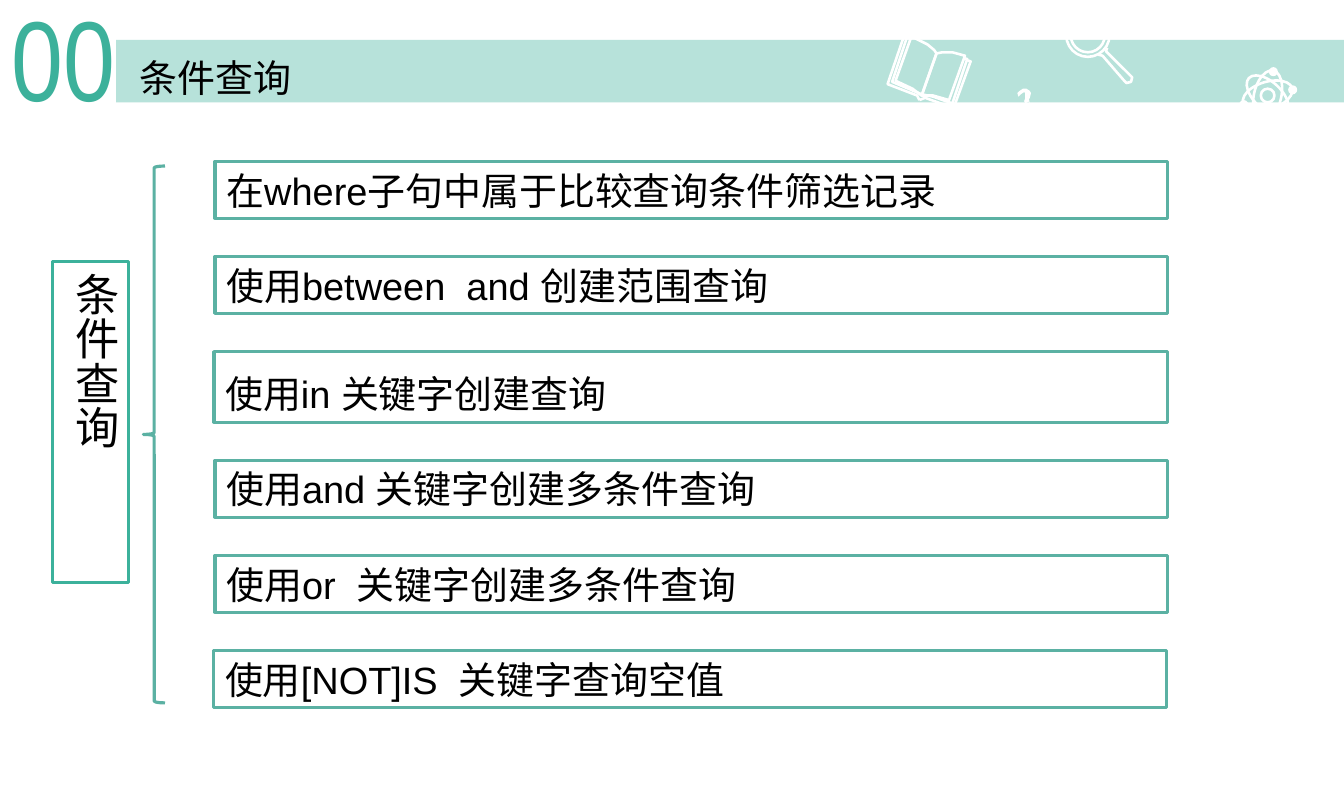
from lxml import etree
from pptx import Presentation
from pptx.dml import color
from pptx.enum import shapes, text
from pptx.oxml import ns
from pptx.util import Inches, Pt

TEAL, SOFT_TEAL, WHITE, BLACK = "3CB19B", "5BB1A3", "FFFFFF", "000000"
ICON_LINE = 1.63
CM_PER_INCH = 2.54


def paint(shape, fill=None, line=None, width=2):
    """Set fill and outline from hex colours; None means no paint."""
    shape.shadow.inherit = False
    if fill:
        shape.fill.solid()
        shape.fill.fore_color.rgb = color.RGBColor.from_string(fill)
    else:
        shape.fill.background()
    if line:
        shape.line.color.rgb = color.RGBColor.from_string(line)
        shape.line.width = Pt(width)
    else:
        shape.line.fill.background()


def write(shape, words, size, font, hex_color, wrap=True):
    frame = shape.text_frame
    frame.word_wrap = wrap
    paragraph = frame.paragraphs[0]
    paragraph.text = words
    paragraph.alignment = text.PP_ALIGN.LEFT
    paragraph.font.size = Pt(size)
    paragraph.font.name = font
    paragraph.font.color.rgb = color.RGBColor.from_string(hex_color)
    return paragraph


presentation = Presentation()
presentation.slide_width = Inches(30 / CM_PER_INCH)
presentation.slide_height = Inches(18 / CM_PER_INCH)
slide = presentation.slides.add_slide(presentation.slide_layouts[6])
canvas = slide.shapes

# Header: number, translucent band, title
number = canvas.add_textbox(Inches(0), Inches(-0.16), Inches(1.29), Inches(1.31))
write(number, "00", 72, "Arial Narrow", TEAL, wrap=False)

band = canvas.add_shape(shapes.MSO_SHAPE.RECTANGLE, Inches(1.02), Inches(0.35),
                        Inches(10.79), Inches(0.55))
paint(band, TEAL)
band_color = band.fill._xPr.find(".//" + ns.qn("a:srgbClr"))
etree.SubElement(band_color, ns.qn("a:alpha")).set("val", "37000")

title = canvas.add_textbox(Inches(1.13), Inches(0.43), Inches(1.53), Inches(0.5))
write(title, "条件查询", 24, "Noto Sans CJK SC", BLACK, wrap=False)

# Header icons, outlines: points, closed, fill, line
book_cover_left = [(7.97, 0.34), (7.94, 0.33), (7.8, 0.74), (8.06, 0.84), (8.08, 0.88)]
book_cover_right = [(8.08, 0.88), (8.13, 0.86), (8.38, 0.95), (8.53, 0.54), (8.5, 0.53)]
book_edge_left = [(8.1, 0.83), (7.84, 0.72), (7.97, 0.33), (8, 0.34)]
book_edge_right = [(8.1, 0.83), (8.2, 0.85), (8.37, 0.91), (8.5, 0.52), (8.47, 0.51)]
book_page_left = [(8.1, 0.84), (8.02, 0.78), (7.87, 0.71), (8.01, 0.32), (8.15, 0.39),
                  (8.21, 0.44), (8.23, 0.47)]
book_page_right = [(8.1, 0.84), (8.2, 0.84), (8.34, 0.88), (8.48, 0.49), (8.37, 0.46),
                   (8.28, 0.46), (8.23, 0.47)]
magnifier_handle = [(9.65, 0.48), (9.69, 0.49), (9.88, 0.71), (9.9, 0.73), (9.94, 0.72),
                    (9.95, 0.68), (9.72, 0.45), (9.73, 0.42)]
question_hook = [(9.05, 0.89), (9.01, 0.91), (9, 0.89), (9.01, 0.86), (9.01, 0.82),
                 (9, 0.81), (8.97, 0.83), (8.95, 0.85), (8.94, 0.82), (8.96, 0.8),
                 (8.99, 0.78), (9.02, 0.78), (9.05, 0.8), (9.06, 0.82), (9.05, 0.86),
                 (9.04, 0.88)]
question_dot = [(9.01, 0.92), (9.05, 0.9), (9.07, 0.94), (9.03, 0.96)]
outlines = [
    (book_cover_left, False, None, WHITE),
    (book_cover_right, False, None, WHITE),
    (book_edge_left, False, None, WHITE),
    (book_edge_right, False, None, WHITE),
    (book_page_left, True, None, WHITE),
    (book_page_right, True, None, WHITE),
    (magnifier_handle, False, None, WHITE),
    (question_hook, True, WHITE, None),
    (question_dot, True, WHITE, None),
]
for points, closed, fill, line in outlines:
    corners = [(Inches(x), Inches(y)) for x, y in points]
    builder = canvas.build_freeform(*corners[0])
    builder.add_line_segments(corners[1:], close=closed)
    paint(builder.convert_to_shape(), fill, line, ICON_LINE)

# Header icons, ovals: centre x, centre y, width, height, rotation, fill, line
ovals = [(9.56, 0.31, size, size, 0, None, WHITE) for size in (0.38, 0.3)]
ovals += [(11.14, 0.84, 0.24, 0.45, 13 + 60 * turn, None, WHITE) for turn in range(3)]
ovals += [(11.14, 0.84, 0.12, 0.12, 0, None, WHITE)]
ovals += [(x, y, 0.08, 0.08, 0, WHITE, None)
          for x, y in ((11.36, 0.79), (10.93, 0.92), (11.19, 0.63))]
for x, y, width, height, rotation, fill, line in ovals:
    oval = canvas.add_shape(shapes.MSO_SHAPE.OVAL, Inches(x - width / 2),
                            Inches(y - height / 2), Inches(width), Inches(height))
    oval.rotation = rotation
    paint(oval, fill, line, ICON_LINE)

# Topic and brace
topic = canvas.add_shape(shapes.MSO_SHAPE.RECTANGLE, Inches(0.46), Inches(2.3),
                         Inches(0.67), Inches(2.82))
paint(topic, WHITE, TEAL)
write(topic, "条件查询", 28, "Arial", BLACK)
topic.text_frame.vertical_anchor = text.MSO_ANCHOR.TOP
topic.text_frame._txBody.bodyPr.set("vert", "eaVert")

brace = canvas.add_shape(shapes.MSO_SHAPE.LEFT_BRACE, Inches(1.26), Inches(1.46),
                         Inches(0.19), Inches(4.72))
paint(brace, None, SOFT_TEAL)

# Query kinds: text, left, width, height, line spacing
queries = [
    ("在where子句中属于比较查询条件筛选记录", 1.89, 8.37, 0.5, 1),
    ("使用between  and 创建范围查询", 1.89, 8.37, 0.5, 1),
    ("使用in 关键字创建查询", 1.88, 8.38, 0.62, 1.3),
    ("使用and 关键字创建多条件查询", 1.89, 8.37, 0.5, 1),
    ("使用or  关键字创建多条件查询", 1.89, 8.37, 0.5, 1),
    ("使用[NOT]IS  关键字查询空值", 1.88, 8.37, 0.5, 1),
]
top, bottom = 1.42, 6.22
gap = (bottom - top - sum(query[3] for query in queries)) / (len(queries) - 1)
for words, left, width, height, spacing in queries:
    box = canvas.add_shape(shapes.MSO_SHAPE.RECTANGLE, Inches(left), Inches(top),
                           Inches(width), Inches(height))
    paint(box, WHITE, SOFT_TEAL)
    paragraph = write(box, words, 24, "Arial", BLACK)
    paragraph.line_spacing = spacing
    top += height + gap

presentation.save("out.pptx")
